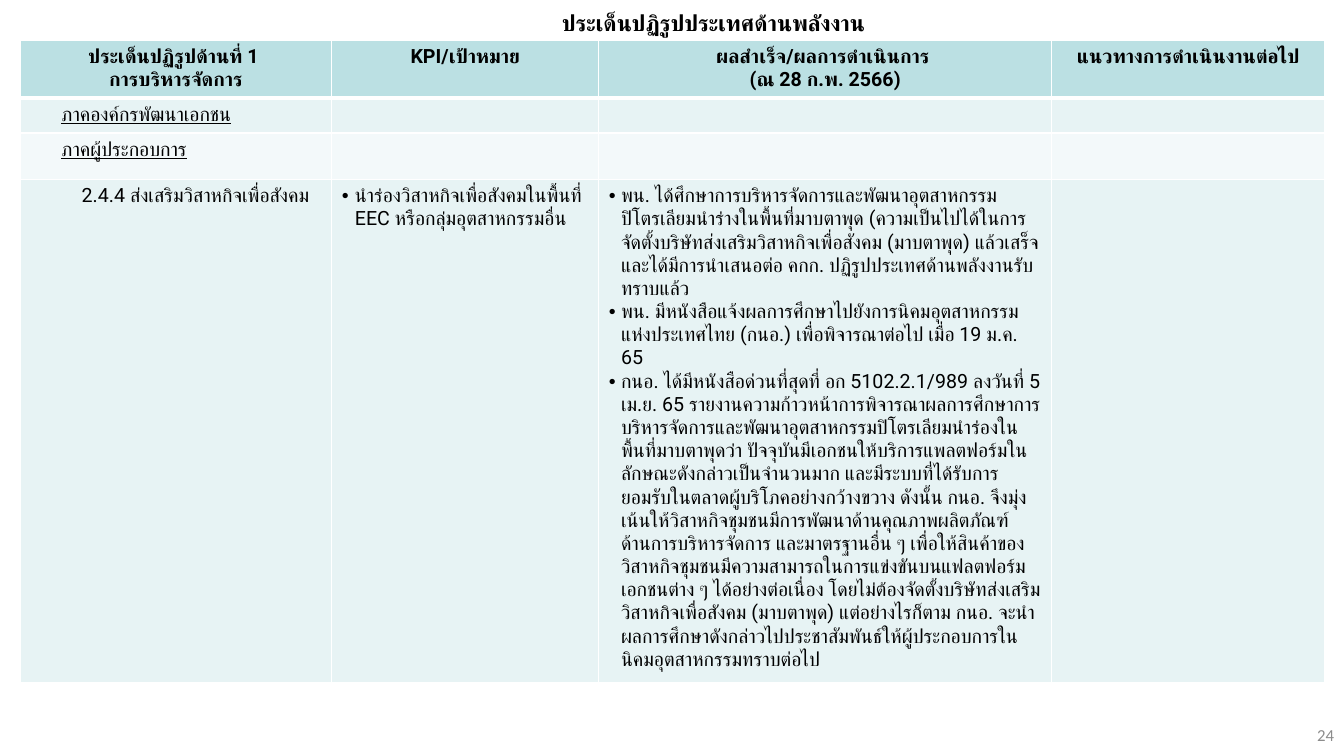
from lxml.etree import SubElement
from pptx import Presentation
from pptx.dml.color import RGBColor
from pptx.enum.lang import MSO_LANGUAGE_ID as Lang
from pptx.enum.text import MSO_ANCHOR as Anchor, MSO_AUTO_SIZE as AutoSize, PP_ALIGN as Align
from pptx.oxml import parse_xml
from pptx.oxml.ns import nsdecls, qn
from pptx.util import Inches, Pt

BLACK = RGBColor(0, 0, 0)
GREY = RGBColor(0x8C, 0x8C, 0x8C)
HEADER_TEAL = RGBColor(0xBB, 0xE0, 0xE3)
BAND_DARK = RGBColor(0xE7, 0xF3, 0xF4)
BAND_LIGHT = RGBColor(0xF3, 0xF9, 0xFA)

HEADING = "ประเด็นปฏิรูปประเทศด้านพลังงาน"
PAGE_NUMBER = "24"
HEADER = [
    ["ประเด็นปฏิรูปด้านที่ 1 ", "การบริหารจัดการ"],
    ["KPI/เป้าหมาย"],
    ["ผลสำเร็จ/ผลการดำเนินการ ", "(ณ 28 ก.พ. 2566)"],
    ["แนวทางการดำเนินงานต่อไป"],
]
TARGETS = ["นำร่องวิสาหกิจเพื่อสังคมในพื้นที่ EEC หรือกลุ่มอุตสาหกรรมอื่น"]
RESULTS = [
    "พน. ได้ศึกษาการบริหารจัดการและพัฒนาอุตสาหกรรมปิโตรเลียมนำร่างในพื้นที่มาบตาพุด "
    "(ความเป็นไปได้ในการจัดตั้งบริษัทส่งเสริมวิสาหกิจเพื่อสังคม (มาบตาพุด) แล้วเสร็จ "
    "และได้มีการนำเสนอต่อ คกก. ปฏิรูปประเทศด้านพลังงานรับทราบแล้ว",
    "พน. มีหนังสือแจ้งผลการศึกษาไปยังการนิคมอุตสาหกรรมแห่งประเทศไทย (กนอ.) "
    "เพื่อพิจารณาต่อไป เมื่อ 19 ม.ค. 65",
    "กนอ. ได้มีหนังสือด่วนที่สุดที่ อก 5102.2.1/989 ลงวันที่ 5 เม.ย. 65 "
    "รายงานความก้าวหน้าการพิจารณาผลการศึกษาการบริหารจัดการและพัฒนาอุตสาหกรรมปิโตรเลียมนำร่องในพื้นที่มาบตาพุดว่า "
    "ปัจจุบันมีเอกชนให้บริการแพลตฟอร์มในลักษณะดังกล่าวเป็นจำนวนมาก "
    "และมีระบบที่ได้รับการยอมรับในตลาดผู้บริโภคอย่างกว้างขวาง ดังนั้น กนอ. "
    "จึงมุ่งเน้นให้วิสาหกิจชุมชนมีการพัฒนาด้านคุณภาพผลิตภัณฑ์ ด้านการบริหารจัดการ และมาตรฐานอื่น ๆ "
    "เพื่อให้สินค้าของวิสาหกิจชุมชนมีความสามารถในการแข่งขันบนแฟลตฟอร์มเอกชนต่าง ๆ ได้อย่างต่อเนื่อง "
    "โดยไม่ต้องจัดตั้งบริษัทส่งเสริมวิสาหกิจเพื่อสังคม (มาบตาพุด) แต่อย่างไรก็ตาม กนอ. "
    "จะนำผลการศึกษาดังกล่าวไปประชาสัมพันธ์ให้ผู้ประกอบการในนิคมอุตสาหกรรมทราบต่อไป",
]
ROWS = [
    HEADER,
    [["ภาคองค์กรพัฒนาเอกชน"], [], [], []],
    [["ภาคผู้ประกอบการ"], [], [], []],
    [["2.4.4 ส่งเสริมวิสาหกิจเพื่อสังคม"], TARGETS, RESULTS, []],
]
COLUMN_WIDTHS = [3.09, 2.65, 4.49, 2.71]
ROW_HEIGHTS = [0.57, 0.35, 0.46, 4.99]
ROW_FILLS = [HEADER_TEAL, BAND_DARK, BAND_LIGHT, BAND_DARK]
TOPIC_INDENTS = [None, (0.51, -0.2), (1.25, -0.94), (1, -0.49)]
BULLET_INDENTS = {1: (0.13, -0.13), 2: (0.12, -0.12)}

TITLE_FORMAT = {"name": "Roboto", "size": Pt(16), "bold": True}
HEADER_FORMAT = {"name": "Roboto", "size": Pt(14), "bold": True}
GROUP_FORMAT = {"name": "Roboto", "size": Pt(14), "bold": False, "underline": True}
DETAIL_FORMAT = {"name": "Roboto", "size": Pt(14), "bold": False, "underline": False}
NUMBER_FORMAT = {"name": "Calibri", "size": Pt(12)}
ROW_FORMATS = [HEADER_FORMAT, GROUP_FORMAT, GROUP_FORMAT, DETAIL_FORMAT]


def write(paragraph, text, text_format, color=BLACK, align=Align.LEFT):
    paragraph.alignment = align
    run = paragraph.add_run()
    run.text = text
    for attribute, value in text_format.items():
        setattr(run.font, attribute, value)
    run.font.color.rgb = color
    run.font.language_id = Lang.THAI
    SubElement(run.font._element, qn("a:cs")).set("typeface", text_format["name"])


def indent(paragraph, left, first, bullet=False):
    properties = paragraph._p.get_or_add_pPr()
    properties.set("marL", str(Inches(left)))
    properties.set("indent", str(Inches(first)))
    if bullet:
        SubElement(properties, qn("a:buFont")).set("typeface", "Arial")
        SubElement(properties, qn("a:buChar")).set("char", "•")


def draw_borders(cell, bottom_width):
    widths = {"lnL": 1, "lnR": 1, "lnT": 1, "lnB": bottom_width}
    for position, (side, width) in enumerate(widths.items()):
        border = parse_xml(
            f'<a:{side} {nsdecls("a")} w="{Pt(width)}"><a:solidFill>'
            f'<a:srgbClr val="FFFFFF"/></a:solidFill></a:{side}>')
        cell._tc.get_or_add_tcPr().insert(position, border)


def fill_cell(cell, row, column, lines):
    cell.fill.solid()
    cell.fill.fore_color.rgb = ROW_FILLS[row]
    is_header = row == 0
    draw_borders(cell, 3 if is_header else 1)
    frame = cell.text_frame
    if not lines:
        frame.paragraphs[0]._p.get_or_add_endParaRPr().set("sz", "1400")
    for number, line in enumerate(lines):
        paragraph = frame.add_paragraph() if number else frame.paragraphs[0]
        write(paragraph, line, ROW_FORMATS[row], align=Align.CENTER if is_header else Align.LEFT)
        if not is_header:
            left, first = BULLET_INDENTS.get(column, TOPIC_INDENTS[row])
            indent(paragraph, left, first, column in BULLET_INDENTS)


def build_table(slide):
    table = slide.shapes.add_table(
        len(ROWS), len(COLUMN_WIDTHS), Inches(0.2), Inches(0.4),
        Inches(sum(COLUMN_WIDTHS)), Inches(sum(ROW_HEIGHTS))).table
    for column, width in zip(table.columns, COLUMN_WIDTHS):
        column.width = Inches(width)
    for row, (cells, height) in enumerate(zip(ROWS, ROW_HEIGHTS)):
        table.rows[row].height = Inches(height)
        for column, lines in enumerate(cells):
            fill_cell(table.cell(row, column), row, column, lines)


def main():
    deck = Presentation()
    deck.slide_width, deck.slide_height = Inches(13.33), Inches(7.5)
    slide = deck.slides.add_slide(deck.slide_layouts[5])

    heading = slide.shapes.title
    heading.left, heading.top = Inches(3.59), Inches(0.04)
    heading.width, heading.height = Inches(6.97), Inches(0.37)
    heading.text_frame.auto_size = AutoSize.NONE
    write(heading.text_frame.paragraphs[0], HEADING, TITLE_FORMAT, align=Align.CENTER)

    build_table(slide)

    page = slide.shapes.add_textbox(Inches(10.33), Inches(7.09), Inches(3), Inches(0.4)).text_frame
    page.word_wrap = True
    page.vertical_anchor = Anchor.MIDDLE
    write(page.paragraphs[0], PAGE_NUMBER, NUMBER_FORMAT, GREY, Align.RIGHT)

    deck.save("out.pptx")


if __name__ == "__main__":
    main()
